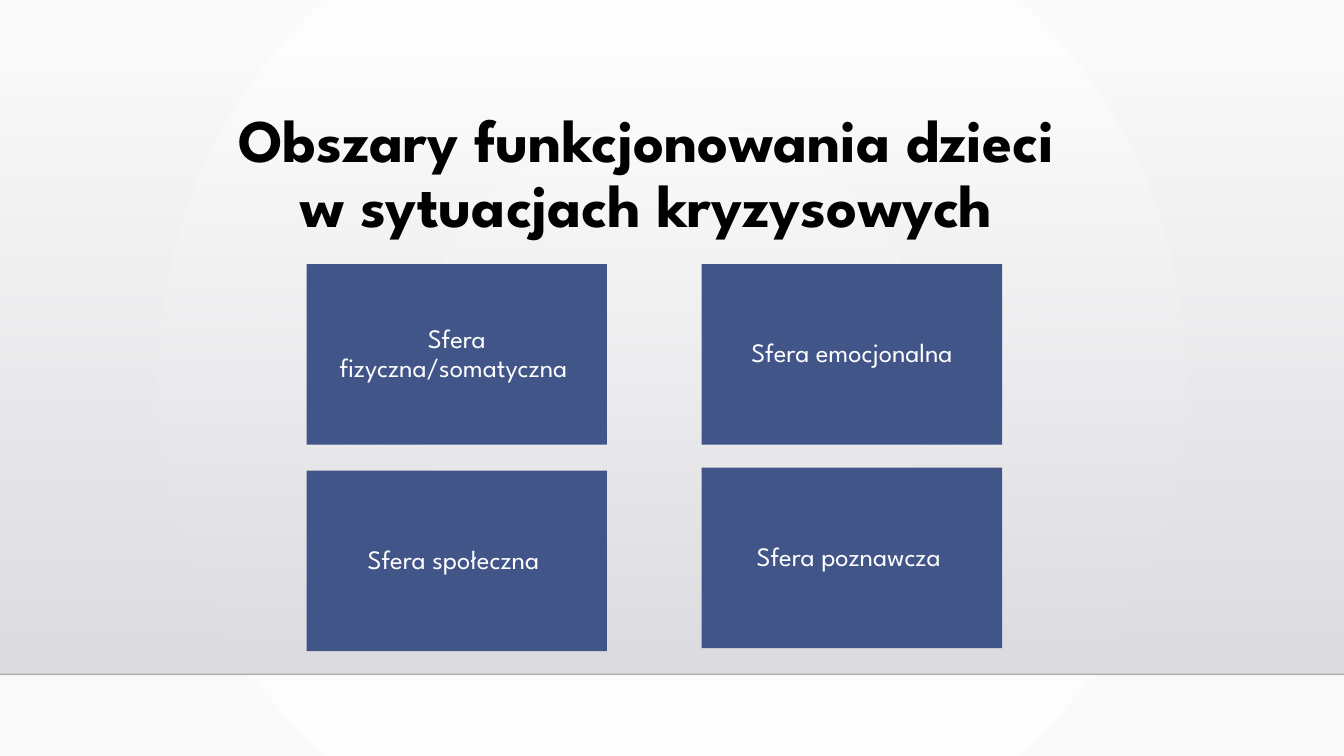
import pptx
import pptx.util
import pptx.dml.color
import pptx.enum.shapes
import pptx.enum.text
import pptx.oxml
import pptx.oxml.ns

FONT = "League Spartan"
TITLE = "Obszary funkcjonowania dzieci \vw sytuacjach kryzysowych "
# Text, column, row, small vertical offset in inches
SPHERES = [
    ("Sfera fizyczna/somatyczna ", 0, 0, 0),
    ("Sfera emocjonalna", 1, 0, 0),
    ("Sfera poznawcza ", 1, 1, 0),
    ("Sfera społeczna ", 0, 1, 0.03),
]
WIDTH, HEIGHT = 13.33, 7.5
GRID_LEFT, GRID_TOP = 3.04, 2.62
COL_STEP, ROW_STEP = 3.92, 2.02
BOX_W, BOX_H = 2.98, 1.79
BAND_TOP, BAND_BOTTOM = 0.51, 6.69

inch = pptx.util.Inches
PP_ALIGN = pptx.enum.text.PP_ALIGN
ANCHOR = pptx.enum.text.MSO_ANCHOR
RECT = pptx.enum.shapes.MSO_SHAPE.RECTANGLE


def color(hex_value):
    return pptx.dml.color.RGBColor.from_string(hex_value)


def gradient(fill, stops, direction):
    """Turn a fill into a gradient of (position, colour, opacity) stops."""
    fill.gradient()
    grad = fill._fill._gradFill
    for child in list(grad):
        grad.remove(child)
    ns = pptx.oxml.ns.nsdecls("a")
    stop_xml = "".join(
        f'<a:gs pos="{pos * 1000}"><a:srgbClr val="{rgb}">'
        f'<a:alpha val="{alpha * 1000}"/></a:srgbClr></a:gs>'
        for pos, rgb, alpha in stops)
    grad.append(pptx.oxml.parse_xml(f"<a:gsLst {ns}>{stop_xml}</a:gsLst>"))
    grad.append(pptx.oxml.parse_xml(direction.format(ns=ns)))


def write(tf, text, size, hex_value, bold, anchor, inset):
    formats = {"word_wrap": True, "vertical_anchor": anchor,
               "auto_size": pptx.enum.text.MSO_AUTO_SIZE.NONE}
    formats.update({f"margin_{side}": inch(inset[i // 2]) for i, side in
                    enumerate(("left", "right", "top", "bottom"))})
    for name, value in formats.items():
        setattr(tf, name, value)
    tf.text = text
    p = tf.paragraphs[0]
    p.alignment, p.line_spacing = PP_ALIGN.CENTER, 0.9
    for r in p.runs:
        for name, value in {"name": FONT, "size": pptx.util.Pt(size),
                            "bold": bold}.items():
            setattr(r.font, name, value)
        r.font.color.rgb = color(hex_value)


def main():
    prs = pptx.Presentation()
    prs.slide_width, prs.slide_height = inch(WIDTH), inch(HEIGHT)
    s = prs.slides.add_slide(prs.slide_layouts[5])

    # Background
    gradient(s.background.fill, [(0, "FFFFFF", 100), (100, "FAFAFA", 100)],
             '<a:path {ns} path="circle"><a:fillToRect l="50000" t="50000" '
             'r="50000" b="50000"/></a:path>')

    # Fading band and its bottom line, behind the title
    band = s.shapes.add_shape(RECT, 0, inch(BAND_TOP), inch(WIDTH),
                              inch(BAND_BOTTOM - BAND_TOP))
    band.shadow.inherit = False
    band.line.fill.background()
    gradient(band.fill, [(0, "DCDCE0", 0), (100, "DEDEE2", 100)],
             '<a:lin {ns} ang="5400000" scaled="0"/>')
    edge = s.shapes.add_connector(pptx.enum.shapes.MSO_CONNECTOR.STRAIGHT, 0,
                                  inch(BAND_BOTTOM), inch(WIDTH), inch(BAND_BOTTOM))
    edge.line.width = pptx.util.Pt(1)
    edge.line.color.rgb = color("000001")
    ns = pptx.oxml.ns.nsdecls("a")
    rgb = edge.line._ln.find(".//" + pptx.oxml.ns.qn("a:srgbClr"))
    rgb.append(pptx.oxml.parse_xml(f'<a:alpha {ns} val="20000"/>'))
    edge._element.spPr.append(pptx.oxml.parse_xml(f"<a:effectLst {ns}/>"))
    for i, sp in enumerate((band, edge)):
        s.shapes._spTree.insert(2 + i, sp._element)

    # Title
    title = s.shapes.title
    title.left, title.top, title.width, title.height = map(
        inch, (1.24, 1.04, 10.5, 1.15))
    write(title.text_frame, TITLE, 43.2, "000000", True, ANCHOR.TOP, (0.1, 0.05))

    # Four spheres
    for text, col, row, offset in SPHERES:
        sp = s.shapes.add_shape(
            RECT, inch(GRID_LEFT + col * COL_STEP),
            inch(GRID_TOP + row * ROW_STEP + offset), inch(BOX_W), inch(BOX_H))
        sp.shadow.inherit = False
        sp.fill.solid()
        sp.fill.fore_color.rgb = color("415588")
        sp.line.fill.background()
        write(sp.text_frame, text, 19, "FFFFFF", False, ANCHOR.MIDDLE, (0.08, 0.08))

    prs.save("out.pptx")


if __name__ == "__main__":
    main()
